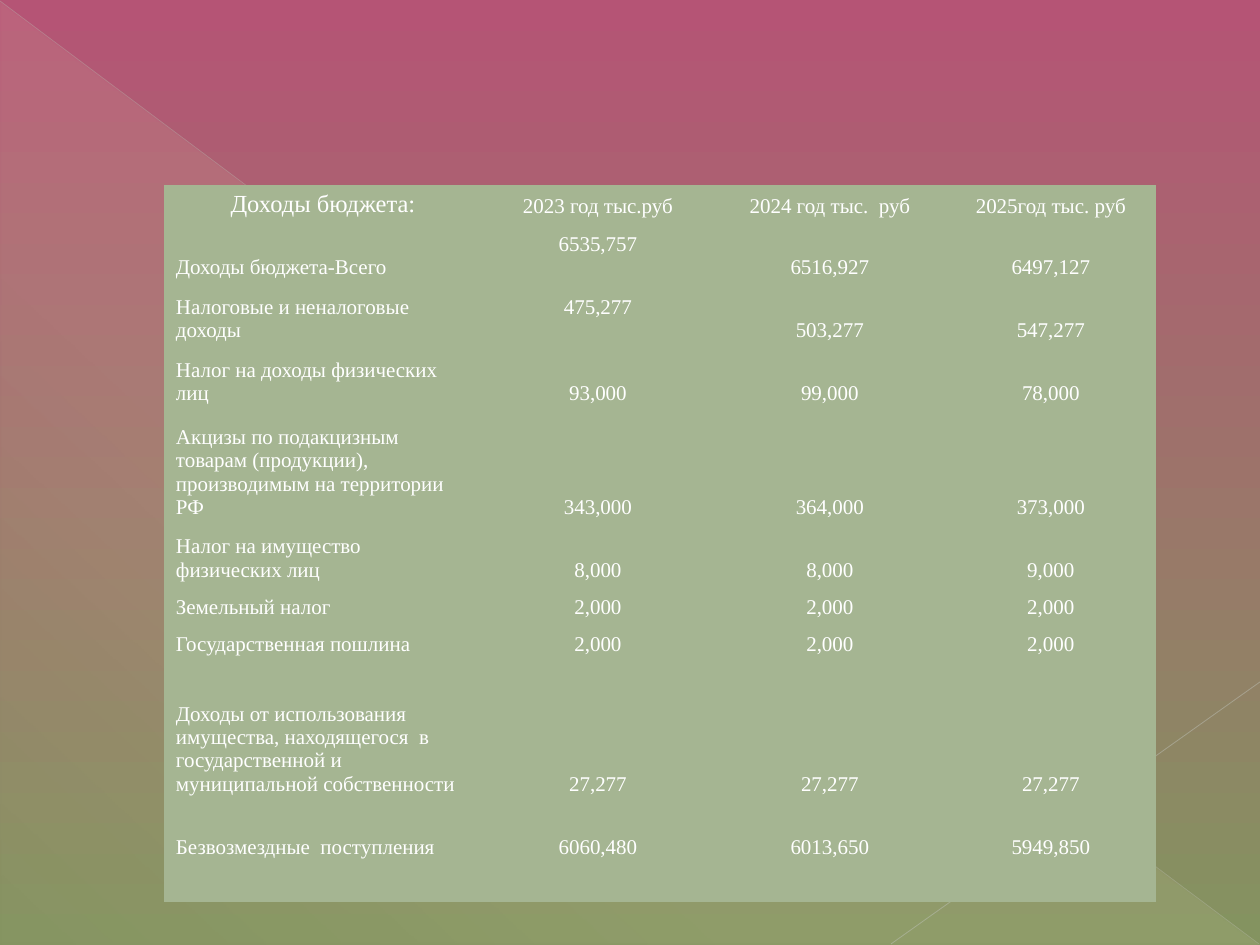
from lxml import etree
from pptx import Presentation, util as u
from pptx.dml.color import RGBColor
from pptx.enum import shapes, text
from pptx.oxml.ns import qn

PX = u.Inches(1) // 126
FONT = "Times New Roman"
WHITE = RGBColor(0xFF, 0xFF, 0xFF)
ROSE = RGBColor(0xB5, 0x54, 0x75)
OLIVE = RGBColor(0x84, 0x93, 0x60)
SAGE = RGBColor(0xA5, 0xB5, 0x92)
CREAM = RGBColor(0xFE, 0xFA, 0xC9)
LONG_LINE = RGBColor(0xBA, 0xBD, 0xB3)
SHORT_LINE = RGBColor(0xC1, 0xC4, 0xBC)
NO_TABLE_STYLE = "{2D5ABB26-0587-4C30-8999-92F81FD0307C}"

COLUMN_WIDTHS = [318, 232, 232, 210]
ROW_HEIGHTS = [37, 61, 63, 63, 114, 63, 37, 37, 140, 63, 37]
LINE_HEIGHT = 23
RAISED_CELLS = {(1, 1), (2, 1)}  # values standing one line above the row's bottom
ROWS = [
    ["Доходы бюджета:", "2023 год тыс.руб", "2024 год тыс.  руб", "2025год тыс. руб"],
    ["Доходы бюджета-Всего", "6535,757", "6516,927", "6497,127"],
    ["Налоговые и неналоговые  доходы", "475,277", "503,277", "547,277"],
    ["Налог на доходы физических лиц", "93,000", "99,000", "78,000"],
    ["Акцизы по подакцизным товарам (продукции), производимым на территории РФ",
     "343,000", "364,000", "373,000"],
    ["Налог на имущество физических лиц", "8,000", "8,000", "9,000"],
    ["Земельный налог", "2,000", "2,000", "2,000"],
    ["Государственная пошлина", "2,000", "2,000", "2,000"],
    ["Доходы от использования имущества, находящегося  в государственной и "
     "муниципальной собственности", "27,277", "27,277", "27,277"],
    ["Безвозмездные  поступления", "6060,480", "6013,650", "5949,850"],
    [""] * 4,
]


def px(*lengths):
    return [u.Emu(length * PX) for length in lengths]


def set_alpha(color_element, percent):
    etree.SubElement(color_element, qn("a:alpha"), val=str(percent * 1000))


def paint_background(slide):
    fill = slide.background.fill
    fill.gradient()
    fill.gradient_angle = 270
    for stop, color, position in zip(fill.gradient_stops, (ROSE, OLIVE), (0, 1)):
        stop.color.rgb = color
        stop.position = position


def add_glow_triangle(slide, box, stops, angle):
    shape = slide.shapes.add_shape(shapes.MSO_SHAPE.RIGHT_TRIANGLE, *px(*box))
    shape.shadow.inherit = False
    shape.line.fill.background()
    shape.fill.gradient()
    gradient = shape._element.spPr.find(qn("a:gradFill"))
    stop_list = gradient.find(qn("a:gsLst"))
    for stop in list(stop_list):
        stop_list.remove(stop)
    for position, alpha in stops:
        stop = etree.SubElement(stop_list, qn("a:gs"), pos=str(position * 1000))
        set_alpha(etree.SubElement(stop, qn("a:srgbClr"), val=str(CREAM)), alpha)
    gradient.find(qn("a:lin")).set("ang", str(angle * 60000))


def add_line(slide, ends, color, width, alpha):
    line = slide.shapes.add_connector(shapes.MSO_CONNECTOR.STRAIGHT, *px(*ends))
    line.line.color.rgb = color
    line.line.width = u.Pt(width)
    properties = line._element.spPr
    set_alpha(next(properties.iter(qn("a:srgbClr"))), alpha)
    etree.SubElement(properties, qn("a:effectLst"))


def fill_cell(cell, content, size, centred, raised):
    cell.fill.solid()
    cell.fill.fore_color.rgb = SAGE
    cell.vertical_anchor = text.MSO_ANCHOR.BOTTOM
    cell.margin_left, cell.margin_right, cell.margin_top, cell.margin_bottom = px(
        12, 12, 6, 6 + LINE_HEIGHT * raised)
    paragraph = cell.text_frame.paragraphs[0]
    if not content:
        # Keeps the empty row as low as a line of body text
        etree.SubElement(paragraph._p, qn("a:endParaRPr"), sz=str(size * 100))
        return
    paragraph.alignment = text.PP_ALIGN.CENTER if centred else text.PP_ALIGN.LEFT
    run = paragraph.add_run()
    run.text = content
    run.font.name = FONT
    run.font.size = u.Pt(size)
    run.font.color.rgb = WHITE


def add_budget_table(slide, left, top):
    frame = slide.shapes.add_table(
        len(ROWS), len(COLUMN_WIDTHS),
        *px(left, top, sum(COLUMN_WIDTHS), sum(ROW_HEIGHTS)))
    table = frame.table
    table.first_row = table.horz_banding = False
    next(frame._element.iter(qn("a:tableStyleId"))).text = NO_TABLE_STYLE
    for column, width in zip(table.columns, px(*COLUMN_WIDTHS)):
        column.width = width
    for row, height in zip(table.rows, px(*ROW_HEIGHTS)):
        row.height = height
    for r, contents in enumerate(ROWS):
        for c, content in enumerate(contents):
            fill_cell(table.cell(r, c), content,
                      size=14 if r == c == 0 else 12,
                      centred=r == 0 or c > 0,
                      raised=(r, c) in RAISED_CELLS)


def main():
    presentation = Presentation()
    presentation.slide_width, presentation.slide_height = px(1260, 945)
    slide = presentation.slides.add_slide(presentation.slide_layouts[6])

    # Backdrop
    paint_background(slide)
    add_glow_triangle(slide, (1, 2, 1258, 942), [(0, 10), (70, 8), (100, 1)], 133)
    add_line(slide, (0, 1, 1259, 944), LONG_LINE, 0.39, 35)
    add_line(slide, (1260, 682, 891, 944), SHORT_LINE, 0.47, 45)

    # Budget revenue
    add_budget_table(slide, 164, 185)

    presentation.save("out.pptx")


if __name__ == "__main__":
    main()
